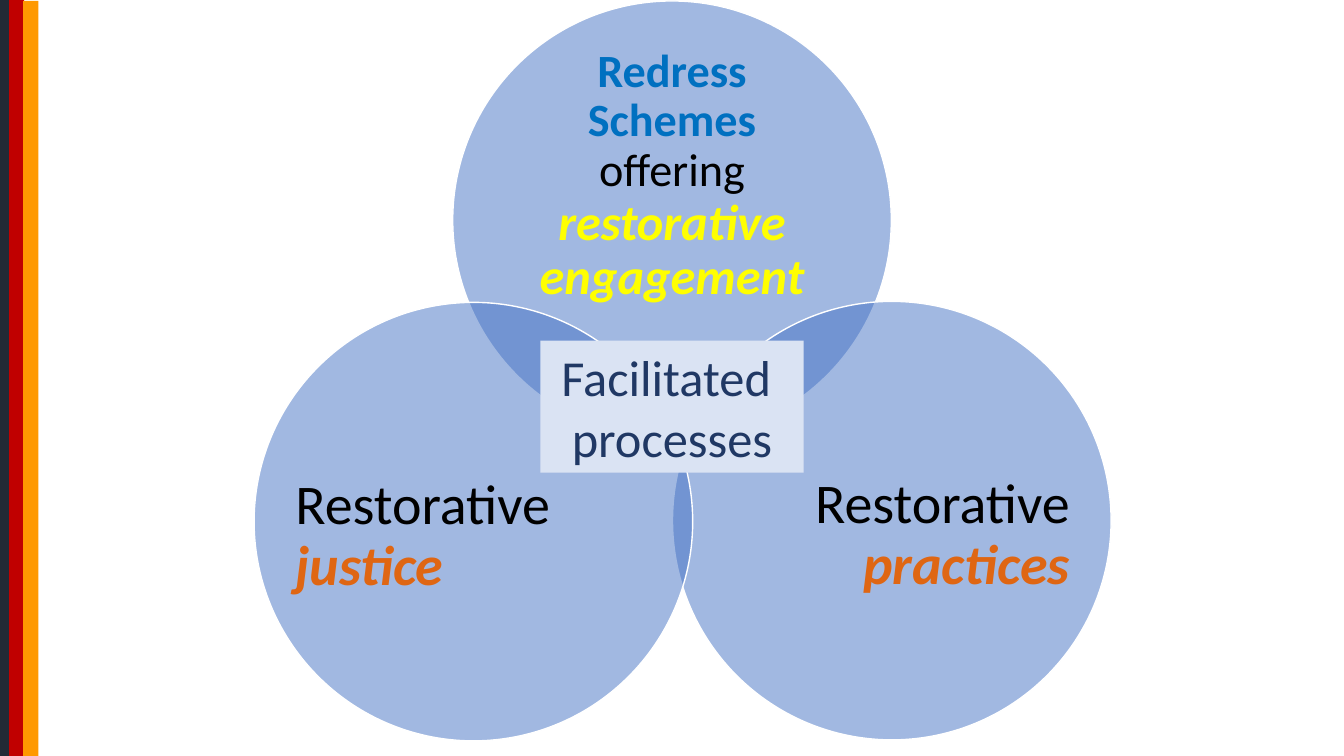
from lxml import etree
from pptx import Presentation
from pptx.dml.color import RGBColor
from pptx.enum.shapes import MSO_SHAPE
from pptx.enum.text import MSO_ANCHOR, PP_ALIGN
from pptx.oxml.ns import qn
from pptx.util import Inches, Pt

RECTANGLE, OVAL = MSO_SHAPE.RECTANGLE, MSO_SHAPE.OVAL
MIDDLE = MSO_ANCHOR.MIDDLE
LEFT, CENTER, RIGHT = PP_ALIGN.LEFT, PP_ALIGN.CENTER, PP_ALIGN.RIGHT

WHITE = RGBColor(0xFF, 0xFF, 0xFF)
BLACK = RGBColor(0x00, 0x00, 0x00)
SLATE = RGBColor(0x22, 0x2A, 0x35)
RED = RGBColor(0xC0, 0x00, 0x00)
AMBER = RGBColor(0xFF, 0x99, 0x00)
CIRCLE_BLUE = RGBColor(0x44, 0x72, 0xC4)
TITLE_BLUE = RGBColor(0x00, 0x70, 0xC0)
YELLOW = RGBColor(0xFF, 0xFF, 0x00)
ORANGE = RGBColor(0xDF, 0x66, 0x13)
PALE_BLUE = RGBColor(0xDA, 0xE3, 0xF3)
NAVY = RGBColor(0x20, 0x38, 0x64)

FONT = "Calibri"
DIAMETER = 4.35


def add_filled(page, kind, left, top, width, height, color):
    shape = page.shapes.add_shape(
        kind, Inches(left), Inches(top), Inches(width), Inches(height))
    shape.shadow.inherit = False
    shape.fill.solid()
    shape.fill.fore_color.rgb = color
    shape.line.fill.background()
    return shape


def add_circle(page, left, top):
    """Add a half-transparent circle with a thin white outline."""
    circle = add_filled(page, OVAL, left, top, DIAMETER, DIAMETER, CIRCLE_BLUE)
    color = circle.fill._xPr.find(qn("a:solidFill"))[0]
    etree.SubElement(color, qn("a:alpha"), val="50000")
    circle.line.color.rgb = WHITE
    circle.line.width = Pt(1)


def add_label(page, left, top, width, height, align, spans):
    """Add one paragraph; each span is (text, size, color, bold, italic)."""
    box = page.shapes.add_textbox(
        Inches(left), Inches(top), Inches(width), Inches(height))
    frame = box.text_frame
    frame.word_wrap = True
    frame.vertical_anchor = MIDDLE
    frame.margin_left = frame.margin_right = 0
    frame.margin_top = frame.margin_bottom = 0
    para = frame.paragraphs[0]
    para.alignment = align
    para.line_spacing = 0.9
    para.font.name = FONT
    for text, size, color, bold, italic in spans:
        span = para.add_run()
        span.text = text
        span.font.name = FONT
        span.font.size = Pt(size)
        span.font.color.rgb = color
        span.font.bold = bold
        span.font.italic = italic


def add_center_box(page):
    box = add_filled(page, RECTANGLE, 5.36, 3.38, 2.61, 1.31, PALE_BLUE)
    frame = box.text_frame
    frame.word_wrap = True
    frame.vertical_anchor = MIDDLE
    frame.text = "Facilitated \nprocesses"
    for para in frame.paragraphs:
        para.alignment = CENTER
        para.font.name = FONT
        para.font.size = Pt(36)
        para.font.color.rgb = NAVY


def main():
    deck = Presentation()
    deck.slide_width, deck.slide_height = Inches(13.33), Inches(7.5)
    page = deck.slides.add_slide(deck.slide_layouts[6])

    for left, top, width, color in [
            (0, 0, 0.1, SLATE), (0.09, 0, 0.15, RED), (0.23, 0.01, 0.15, AMBER)]:
        add_filled(page, RECTANGLE, left, top, width, 7.5 - top, color)

    add_circle(page, 4.49, 0.01)
    add_label(page, 5.07, 0.77, 3.19, 1.96, CENTER, [
        ("Redress Schemes ", 33, TITLE_BLUE, True, False),
        ("offering ", 33, BLACK, False, False),
        ("restorative engagement", 36, YELLOW, True, True)])

    for circle_left, circle_top, label_left, align, word in [
            (6.67, 2.99, 8, RIGHT, "practices"),
            (2.52, 3, 2.93, LEFT, "justice")]:
        add_circle(page, circle_left, circle_top)
        add_label(page, label_left, circle_top + 1.13, 2.61, 2.39, align, [
            ("Restorative ", 40, BLACK, False, False),
            (word, 40, ORANGE, True, True)])

    add_center_box(page)
    deck.save("out.pptx")


if __name__ == "__main__":
    main()
